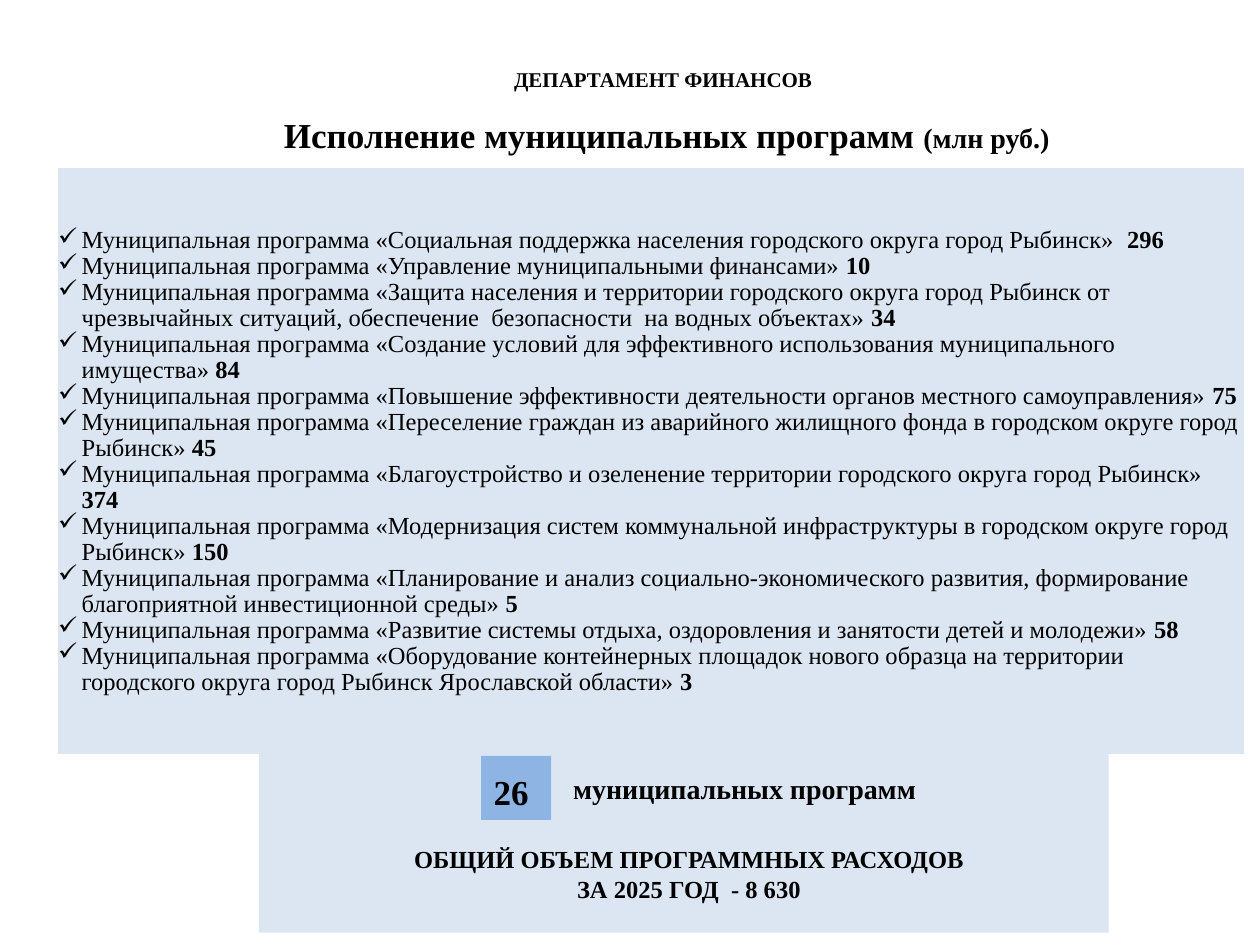
import pptx
import pptx.util
import pptx.dml.color
import pptx.enum.shapes
import pptx.enum.text
import pptx.oxml.ns
import lxml.etree

Pt = pptx.util.Pt
RGB = pptx.dml.color.RGBColor
ALIGN = pptx.enum.text.PP_ALIGN
MIDDLE = pptx.enum.text.MSO_ANCHOR.MIDDLE
BOTTOM = pptx.enum.text.MSO_ANCHOR.BOTTOM

BLACK = RGB(0x00, 0x00, 0x00)
PALE = RGB(0xDC, 0xE6, 0xF2)
BLUE = RGB(0x8E, 0xB4, 0xE3)
FONT = "Times New Roman"
INDENT = Pt(13.5)

ITEMS = [
    ("Социальная поддержка населения городского округа город Рыбинск", " 296"),
    ("Управление муниципальными финансами", "10"),
    ("Защита населения и территории городского округа город Рыбинск от "
     "чрезвычайных ситуаций, обеспечение  безопасности  на водных объектах", "34"),
    ("Создание условий для эффективного использования муниципального имущества", "84"),
    ("Повышение эффективности деятельности органов местного самоуправления", "75"),
    ("Переселение граждан из аварийного жилищного фонда в городском округе "
     "город Рыбинск", "45"),
    ("Благоустройство и озеленение территории городского округа город Рыбинск", "374"),
    ("Модернизация систем коммунальной инфраструктуры в городском округе "
     "город Рыбинск", "150"),
    ("Планирование и анализ социально-экономического развития, формирование "
     "благоприятной инвестиционной среды", "5"),
    ("Развитие системы отдыха, оздоровления и занятости детей и молодежи", "58"),
    ("Оборудование контейнерных площадок нового образца на территории "
     "городского округа город Рыбинск Ярославской области", "3"),
]


def write(para, text, size=14, bold=True, align=None):
    """Add a formatted run to a paragraph."""
    if align is not None:
        para.alignment = align
    run = para.add_run()
    run.text = text
    run.font.name = FONT
    run.font.size = Pt(size)
    run.font.bold = bold
    run.font.color.rgb = BLACK


def add_tick(para):
    """Give a paragraph a hanging tick bullet."""
    para.line_spacing = 0.96
    props = para._p.get_or_add_pPr()
    props.set("marL", str(INDENT))
    props.set("indent", str(-INDENT))
    tick = lxml.etree.SubElement(props, pptx.oxml.ns.qn("a:buChar"))
    tick.set("char", "✓")


def add_title(slide):
    """Place the title with its smaller unit."""
    title = slide.shapes.title
    title.left, title.top, title.width, title.height = Pt(24), Pt(60), Pt(714), Pt(34)
    frame = title.text_frame
    frame.vertical_anchor = MIDDLE
    para = frame.paragraphs[0]
    write(para, "Исполнение муниципальных программ ", size=20, align=ALIGN.CENTER)
    write(para, "(млн руб.)", size=16)


def add_list(slide):
    """Add the one-cell table that lists the programmes."""
    table = slide.shapes.add_table(1, 1, Pt(32.5), Pt(95.5), Pt(679), Pt(336)).table
    table.first_row = table.horz_banding = False
    cell = table.cell(0, 0)
    cell.fill.solid()
    cell.fill.fore_color.rgb = PALE
    cell.vertical_anchor = MIDDLE
    cell.margin_left = cell.margin_right = cell.margin_top = Pt(0.7)
    cell.margin_bottom = 0
    frame = cell.text_frame
    for i, (name, sum_) in enumerate(ITEMS):
        para = frame.add_paragraph() if i else frame.paragraphs[0]
        add_tick(para)
        write(para, f"Муниципальная программа «{name}» ", bold=False)
        write(para, sum_)


def add_box(slide, left, top, width, height, fill):
    """Add a plain filled rectangle and return its text frame."""
    kind = pptx.enum.shapes.MSO_SHAPE.RECTANGLE
    box = slide.shapes.add_shape(kind, Pt(left), Pt(top), Pt(width), Pt(height))
    box.shadow.inherit = False
    box.fill.solid()
    box.fill.fore_color.rgb = fill
    box.line.fill.background()
    return box.text_frame


def add_label(slide, left, top, width, height, text, size):
    """Add a centred line of text."""
    box = slide.shapes.add_textbox(Pt(left), Pt(top), Pt(width), Pt(height))
    frame = box.text_frame
    frame.word_wrap = True
    frame.vertical_anchor = MIDDLE
    write(frame.paragraphs[0], text, size=size, align=ALIGN.CENTER)


def add_total(slide):
    """Add the panel with the total spending."""
    frame = add_box(slide, 148, 422.5, 485.5, 110.5, PALE)
    frame.vertical_anchor = BOTTOM
    frame.margin_bottom = Pt(17)
    frame.margin_left = Pt(13)
    write(frame.paragraphs[0], "ОБЩИЙ ОБЪЕМ ПРОГРАММНЫХ РАСХОДОВ", align=ALIGN.CENTER)
    write(frame.add_paragraph(), "ЗА 2025 ГОД  - 8 630", align=ALIGN.CENTER)


def add_count(slide):
    """Add the badge with the number of programmes."""
    frame = add_box(slide, 275, 432, 40, 36.5, BLUE)
    frame.vertical_anchor = MIDDLE
    frame.margin_top = Pt(8)
    write(frame.paragraphs[0], "26", size=20, align=ALIGN.LEFT)
    add_label(slide, 319, 437, 213, 27, "муниципальных программ", 16)


def main():
    """Build and save the slide."""
    deck = pptx.Presentation()
    deck.slide_width, deck.slide_height = Pt(720), Pt(540)
    slide = deck.slides.add_slide(deck.slide_layouts[5])
    add_title(slide)
    add_list(slide)
    add_total(slide)
    add_label(slide, 232, 28, 294, 34, "ДЕПАРТАМЕНТ ФИНАНСОВ", 12)
    add_count(slide)
    deck.save("out.pptx")


if __name__ == "__main__":
    main()
